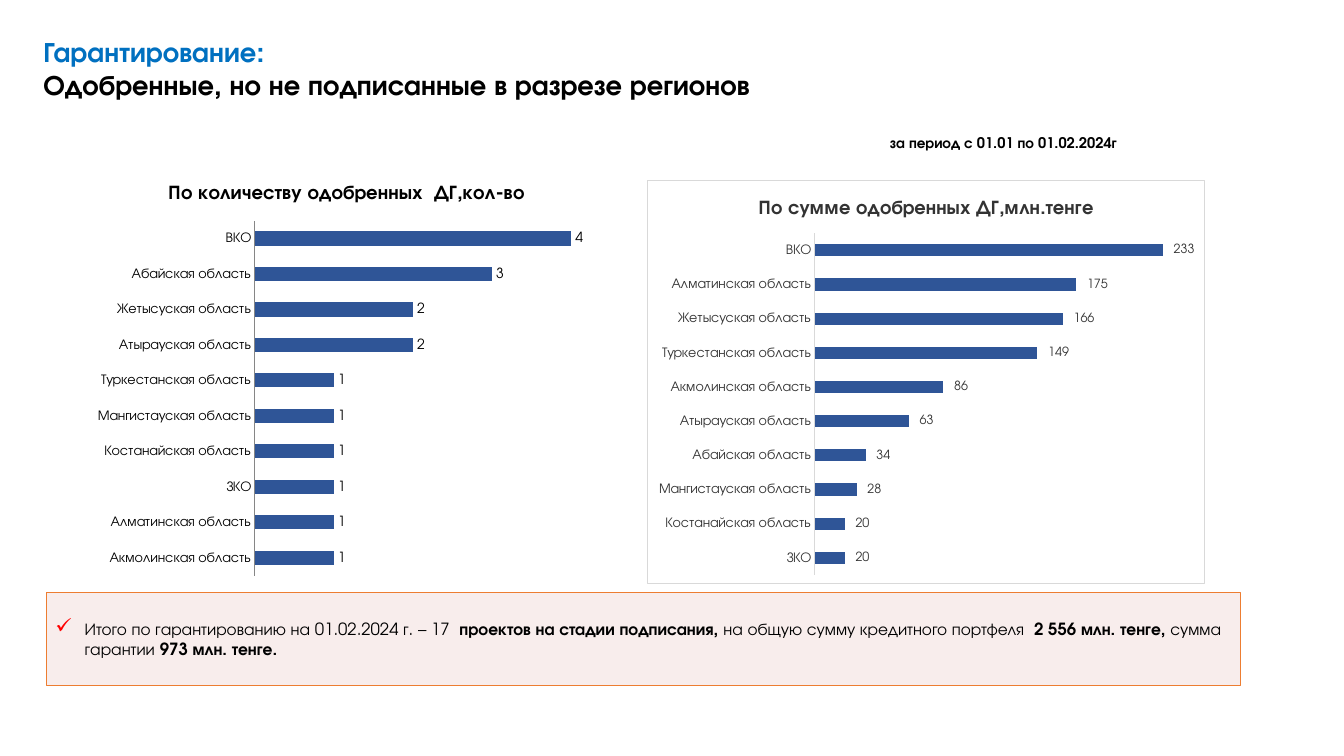
from lxml import etree
from pptx import Presentation
from pptx.chart.data import CategoryChartData
from pptx.dml.color import RGBColor
from pptx.enum.chart import XL_CHART_TYPE, XL_LABEL_POSITION, XL_TICK_MARK
from pptx.enum.shapes import MSO_SHAPE
from pptx.enum.text import MSO_ANCHOR, MSO_AUTO_SIZE
from pptx.oxml import parse_xml
from pptx.oxml.ns import nsdecls, qn
from pptx.util import Pt

BAR = XL_CHART_TYPE.BAR_CLUSTERED
OUT = XL_LABEL_POSITION.OUTSIDE_END
NO_TICK = XL_TICK_MARK.NONE
RECT = MSO_SHAPE.RECTANGLE
TOP, MID = MSO_ANCHOR.TOP, MSO_ANCHOR.MIDDLE
NO_FIT = MSO_AUTO_SIZE.NONE

BLACK = RGBColor(0x00, 0x00, 0x00)
DARK = RGBColor(0x33, 0x33, 0x33)
GREY = RGBColor(0x86, 0x86, 0x86)
PALE = RGBColor(0xD9, 0xD9, 0xD9)
BLUE = RGBColor(0x00, 0x70, 0xC0)
NAVY = RGBColor(0x2F, 0x55, 0x97)
PINK = RGBColor(0xF2, 0xDC, 0xDB)
ORANGE = RGBColor(0xED, 0x7D, 0x31)
RED = RGBColor(0xFF, 0x00, 0x00)

SUM_FMT = r"_-* #\ ##0_р_._-"


class Page:
    """Style and current slide."""

    face = "TeX Gyre Adventor"

    def __init__(self, slide):
        self.slide = slide

    def style(self, font, size, color, bold=False):
        font.name, font.size, font.bold = self.face, Pt(size), bold
        font.color.rgb = color

    def title(self, box, lines, size, colors):
        head = self.slide.shapes.title
        head.left, head.top, head.width, head.height = map(Pt, box)
        frame = head.text_frame
        frame.text = "\v".join(lines)
        frame.auto_size, frame.vertical_anchor = NO_FIT, TOP
        para = frame.paragraphs[0]
        para.alignment, para.line_spacing = 1, 1.0
        for run, color in zip(para.runs, colors):
            self.style(run.font, size, color, True)

    def label(self, box, text, size):
        frame = self.slide.shapes.add_textbox(*map(Pt, box)).text_frame
        frame.word_wrap = True
        frame.text = text
        self.style(frame.paragraphs[0].runs[0].font, size, BLACK, True)

    def note(self, box, parts, size):
        shape = self.slide.shapes.add_shape(RECT, *map(Pt, box))
        shape.shadow.inherit = False
        shape.fill.solid()
        shape.fill.fore_color.rgb = PINK
        tint = shape._element.spPr.find(qn("a:solidFill"))[0]
        etree.SubElement(tint, qn("a:alpha"), val="50000")
        shape.line.color.rgb, shape.line.width = ORANGE, Pt(1)
        frame = shape.text_frame
        frame.word_wrap, frame.vertical_anchor = True, MID
        frame.margin_left = frame.margin_right = Pt(5.8)
        frame.margin_top = frame.margin_bottom = Pt(2.9)
        para = frame.paragraphs[0]
        para.alignment, para.space_after = 1, Pt(6)
        self.tick(para)
        for text, bold in parts:
            run = para.add_run()
            run.text = text
            self.style(run.font, size, BLACK, bold)

    def tick(self, para):
        props = para._p.get_or_add_pPr()
        props.set("marL", str(Pt(21.6)))
        props.set("indent", str(Pt(-20.9)))
        color = etree.SubElement(props, qn("a:buClr"))
        etree.SubElement(color, qn("a:srgbClr"), val=str(RED))
        etree.SubElement(props, qn("a:buSzPct"), val="125000")
        etree.SubElement(props, qn("a:buChar"), char="✓")

    def bars(self, box, title, rows, top, gap, plot, color, rule, size,
             fmt="General", frame=False):
        data = CategoryChartData()
        data.categories = [name for name, _ in rows]
        data.add_series("Series 1", [value for _, value in rows])
        chart = self.slide.shapes.add_chart(BAR, *map(Pt, box), data).chart
        self.style(chart.font, 10, color)
        chart.has_legend = False
        chart.has_title = True
        head = chart.chart_title
        head.include_in_layout = False
        head.text_frame.text = title
        self.style(head.text_frame.paragraphs[0].runs[0].font, 14, color, True)

        # Axes
        cats, vals = chart.category_axis, chart.value_axis
        cats.major_tick_mark = cats.minor_tick_mark = NO_TICK
        cats.format.line.color.rgb = rule
        cats.format.line.width = Pt(0.75)
        self.style(cats.tick_labels.font, 10, color)
        vals.visible = vals.has_major_gridlines = False
        vals.minimum_scale, vals.maximum_scale = 0, top

        # Bars and their values
        group = chart.plots[0]
        group.gap_width, group.vary_by_categories = gap, False
        fill = group.series[0].format.fill
        fill.solid()
        fill.fore_color.rgb = NAVY
        group.has_data_labels = True
        marks = group.data_labels
        marks.show_value, marks.position = True, OUT
        marks.number_format, marks.number_format_is_linked = fmt, False
        self.style(marks.font, size, color)
        self.place(chart, plot)
        self.border(chart, frame)

    def place(self, chart, plot):
        area = chart._chartSpace.chart.plotArea
        for old in area.findall(qn("c:layout")):
            area.remove(old)
        layout = etree.Element(qn("c:layout"))
        area.insert(0, layout)
        manual = etree.SubElement(layout, qn("c:manualLayout"))
        pairs = [("layoutTarget", "inner"), ("xMode", "edge"), ("yMode", "edge")]
        for key, value in pairs + list(zip("xywh", plot)):
            etree.SubElement(manual, qn("c:" + key), val=str(value))

    def border(self, chart, frame):
        fill = line = "<a:noFill/>"
        if frame:
            fill = '<a:solidFill><a:srgbClr val="FFFFFF"/></a:solidFill>'
            line = f'<a:solidFill><a:srgbClr val="{PALE}"/></a:solidFill>'
        props = parse_xml(f'<c:spPr {nsdecls("c", "a")}>{fill}'
                          f'<a:ln w="{Pt(0.75)}">{line}</a:ln></c:spPr>')
        chart._chartSpace.find(qn("c:txPr")).addprevious(props)


def main():
    deck = Presentation()
    deck.slide_width, deck.slide_height = Pt(960), Pt(540)
    page = Page(deck.slides.add_slide(deck.slide_layouts[5]))

    # Heading and period
    page.title((23.8, 20.9, 566.6, 79.9),
               ["Гарантирование:", "Одобренные, но не подписанные в разрезе регионов"],
               20, [BLUE, BLACK])
    page.label((628.6, 92.2, 185.8, 20.2), "за период с 01.01 по 01.02.2024г", 10.5)

    # Total
    page.note((33.1, 423.4, 853.2, 66.2), [
        ("Итого по гарантированию на 01.02.2024 г. – 17 ", False),
        (" проектов на стадии подписания, ", True),
        ("на общую сумму кредитного портфеля  ", False),
        ("2 556 млн. тенге, ", True),
        ("сумма гарантии", False),
        (" 973 млн. тенге.", True)], 12)

    # Number of guarantees
    page.bars((42.5, 118.1, 410.4, 305.3), "По количеству одобренных  ДГ,кол-во", [
        ("Акмолинская область", 1), ("Алматинская область", 1), ("ЗКО", 1),
        ("Костанайская область", 1), ("Мангистауская область", 1),
        ("Туркестанская область", 1), ("Атырауская область", 2),
        ("Жетысуская область", 2), ("Абайская область", 3), ("ВКО", 4)],
        4.5, 150, (0.34, 0.13, 0.62, 0.83), BLACK, GREY, 10)

    # Sum of guarantees
    page.bars((462.2, 128.9, 401, 288), "По сумме одобренных ДГ,млн.тенге", [
        ("ЗКО", 20), ("Костанайская область", 20), ("Мангистауская область", 28),
        ("Абайская область", 34), ("Атырауская область", 63),
        ("Акмолинская область", 86), ("Туркестанская область", 149),
        ("Жетысуская область", 166), ("Алматинская область", 175), ("ВКО", 233)],
        250, 182, (0.3, 0.13, 0.67, 0.85), DARK, PALE, 9, SUM_FMT, True)

    deck.save("out.pptx")


if __name__ == "__main__":
    main()
